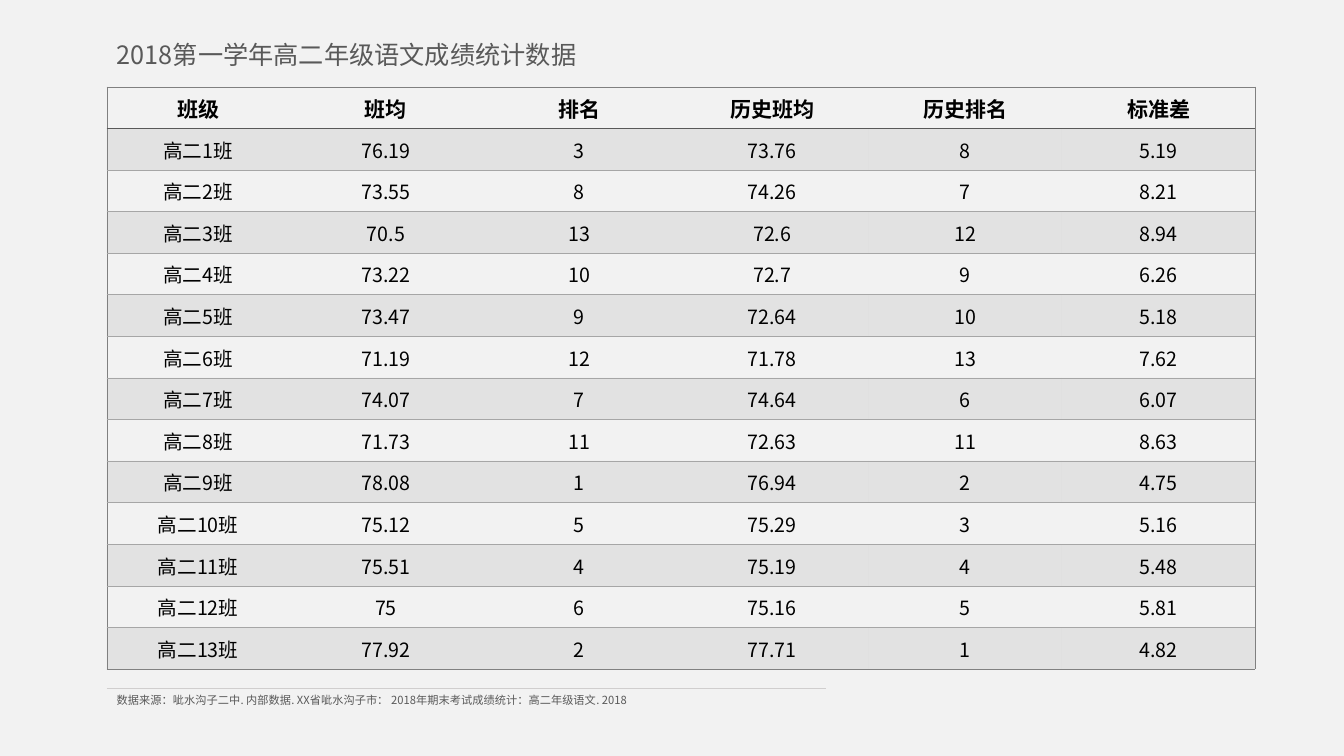
from dataclasses import dataclass

from lxml.etree import SubElement
from pptx import Presentation
from pptx.dml.color import RGBColor
from pptx.enum.shapes import MSO_CONNECTOR
from pptx.enum.text import MSO_ANCHOR, MSO_AUTO_SIZE as AUTO_SIZE, PP_ALIGN
from pptx.oxml.ns import qn
from pptx.util import Inches, Pt


@dataclass(frozen=True)
class Theme:
    font: str = "Noto Sans CJK SC"
    background: str = "F2F2F2"
    muted: str = "595959"
    ink: str = "000000"
    band: str = "A5A5A5"
    band_alpha: int = 20
    frame: str = "808080"
    divider: str = "A6A6A6"
    source_rule: str = "D0CECE"
    title_size: float = 18
    header_size: float = 15
    body_size: float = 14
    source_size: float = 8
    thin: float = 0.25
    thick: float = 1
    plain_table: str = "{2D5ABB26-0587-4C30-8999-92F81FD0307C}"


THEME = Theme()

HEADINGS = ["班级", "班均", "排名", "历史班均", "历史排名", "标准差"]
SCORES = [
    ("76.19", "3", "73.76", "8", "5.19"),
    ("73.55", "8", "74.26", "7", "8.21"),
    ("70.5", "13", "72.6", "12", "8.94"),
    ("73.22", "10", "72.7", "9", "6.26"),
    ("73.47", "9", "72.64", "10", "5.18"),
    ("71.19", "12", "71.78", "13", "7.62"),
    ("74.07", "7", "74.64", "6", "6.07"),
    ("71.73", "11", "72.63", "11", "8.63"),
    ("78.08", "1", "76.94", "2", "4.75"),
    ("75.12", "5", "75.29", "3", "5.16"),
    ("75.51", "4", "75.19", "4", "5.48"),
    ("75", "6", "75.16", "5", "5.81"),
    ("77.92", "2", "77.71", "1", "4.82"),
]


def write(paragraph, text, size, color, bold=False):
    run = paragraph.add_run()
    run.text = text
    run.font.size = Pt(size)
    run.font.bold = bold
    run.font.color.rgb = RGBColor.from_string(color)
    run.font.name = THEME.font
    SubElement(run.font._element, qn("a:ea"), typeface=THEME.font)


def set_borders(cell, **edges):
    properties = cell._tc.get_or_add_tcPr()
    for side in "LRTB":
        color, width = edges.get(side, (None, 0))
        line = SubElement(properties, qn(f"a:ln{side}"), w=str(Pt(width)))
        if color:
            solid = SubElement(line, qn("a:solidFill"))
            SubElement(solid, qn("a:srgbClr"), val=color)
        else:
            SubElement(line, qn("a:noFill"))


def shade(cell, banded):
    if not banded:
        cell.fill.background()
        return
    cell.fill.solid()
    cell.fill.fore_color.rgb = RGBColor.from_string(THEME.band)
    tint = cell._tc.tcPr.find(f"{qn('a:solidFill')}/{qn('a:srgbClr')}")
    SubElement(tint, qn("a:alpha"), val=str(THEME.band_alpha * 1000))


def add_title(slide, left, top, width, height):
    title = slide.shapes.title
    title.left, title.top, title.width, title.height = map(Inches, (left, top, width, height))
    frame = title.text_frame
    frame.word_wrap = False
    frame.auto_size = AUTO_SIZE.SHAPE_TO_FIT_TEXT
    frame.vertical_anchor = MSO_ANCHOR.TOP
    heading = frame.paragraphs[0]
    heading.alignment = PP_ALIGN.LEFT
    write(heading, "2018第一学年高二年级语文成绩统计数据", THEME.title_size, THEME.muted)


def add_score_table(slide, left, top, width, height):
    rows = [HEADINGS] + [(f"高二{n}班", *scores) for n, scores in enumerate(SCORES, 1)]
    last_row, last_column = len(rows) - 1, len(HEADINGS) - 1
    class_width = 1.81
    frame = slide.shapes.add_table(
        len(rows), len(HEADINGS), *map(Inches, (left, top, width, height)))
    table = frame.table
    table.horz_banding = False
    table._tbl.tblPr.find(qn("a:tableStyleId")).text = THEME.plain_table
    for c, column in enumerate(table.columns):
        column.width = Inches((width - class_width) / last_column if c else class_width)
    for row in table.rows:
        row.height = Inches(height / len(rows))

    outer = (THEME.frame, THEME.thin)
    header_rule = (THEME.muted, THEME.thick)
    inner = (THEME.divider, THEME.thin)
    rules = [outer, header_rule] + [inner] * (last_row - 1) + [outer]
    for r, values in enumerate(rows):
        for c, value in enumerate(values):
            cell = table.cell(r, c)
            cell.margin_left = cell.margin_right = cell.margin_top = Inches(0.01)
            cell.margin_bottom = 0
            cell.vertical_anchor = MSO_ANCHOR.MIDDLE
            edges = {"T": rules[r], "B": rules[r + 1]}
            if c == 0:
                edges["L"] = outer
            if c == last_column:
                edges["R"] = outer
            set_borders(cell, **edges)
            shade(cell, r % 2 == 1)
            entry = cell.text_frame.paragraphs[0]
            entry.alignment = PP_ALIGN.CENTER
            size = THEME.body_size if r else THEME.header_size
            write(entry, value, size, THEME.ink, bold=r == 0)


def add_source(slide, left, top, width, height):
    source = slide.shapes.add_textbox(*map(Inches, (left, top, width, height)))
    source.text_frame.word_wrap = True
    source.text_frame.auto_size = AUTO_SIZE.SHAPE_TO_FIT_TEXT
    write(source.text_frame.paragraphs[0],
          "数据来源：呲水沟子二中. 内部数据. XX省呲水沟子市： 2018年期末考试成绩统计：高二年级语文. 2018",
          THEME.source_size, THEME.muted)
    rule_length = 7.13
    rule = slide.shapes.add_connector(
        MSO_CONNECTOR.STRAIGHT, *map(Inches, (left, top, left + rule_length, top)))
    rule.line.color.rgb = RGBColor.from_string(THEME.source_rule)
    rule.line.width = Pt(0.5)
    SubElement(rule._element.spPr, qn("a:effectLst"))


def main():
    deck = Presentation()
    deck.slide_width, deck.slide_height = Inches(13.33), Inches(7.5)
    slide = deck.slides.add_slide(deck.slide_layouts[5])
    slide.background.fill.solid()
    slide.background.fill.fore_color.rgb = RGBColor.from_string(THEME.background)
    margin = 1.06
    add_score_table(slide, margin, 0.86, 11.39, 5.78)
    add_title(slide, margin, 0.34, 4.82, 0.4)
    add_source(slide, margin, 6.83, 6.67, 0.24)
    deck.save("out.pptx")


if __name__ == "__main__":
    main()
